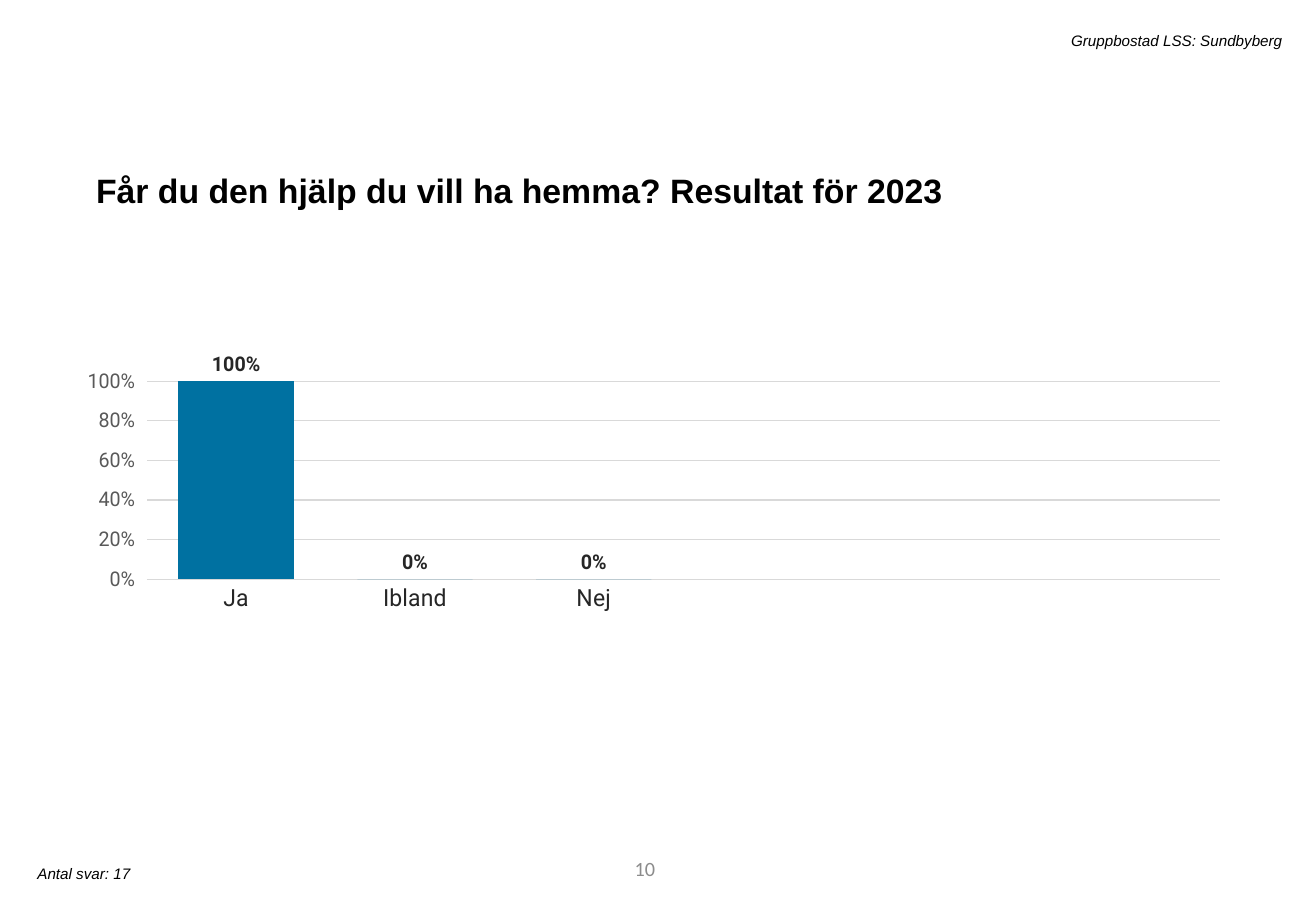
from pptx import Presentation
from pptx.chart.data import CategoryChartData
from pptx.dml.color import RGBColor
from pptx.enum import chart as ch, text as tx
from pptx.util import Inches, Pt

GRID = "D9D9D9"
DARK = "262626"


def color(hex_code):
    return RGBColor.from_string(hex_code)


def style_font(font, size, face="Arial", ink="000000", bold=False, italic=False):
    font.size = Pt(size)
    font.name = face
    font.bold = bold
    font.italic = italic
    font.color.rgb = color(ink)


def place(shape, left, top, width, height):
    shape.left, shape.top = Inches(left), Inches(top)
    shape.width, shape.height = Inches(width), Inches(height)


def write(shape, words, align=tx.PP_ALIGN.LEFT, anchor=tx.MSO_ANCHOR.TOP,
          wrap=True, fit=tx.MSO_AUTO_SIZE.SHAPE_TO_FIT_TEXT, **font_format):
    frame = shape.text_frame
    frame.word_wrap = wrap
    frame.auto_size = fit
    frame.vertical_anchor = anchor
    paragraph = frame.paragraphs[0]
    paragraph.alignment = align
    run = paragraph.add_run()
    run.text = words
    style_font(run.font, **font_format)
    return paragraph


def add_text(slide, words, box, **text_format):
    shape = slide.shapes.add_textbox(*(Inches(n) for n in box))
    return write(shape, words, **text_format)


def set_line(line, hex_code):
    line.color.rgb = color(hex_code)
    line.width = Pt(0.75)


def set_plot_area(chart, **fractions):
    area = chart._chartSpace.chart.plotArea
    layout = area.find(area.tag.replace("plotArea", "layout"))
    if layout is None:
        layout = area.makeelement(area.tag.replace("plotArea", "layout"), {})
        area.insert(0, layout)

    def add(parent, tag, value=None):
        attributes = {} if value is None else {"val": str(value)}
        child = parent.makeelement(area.tag.replace("plotArea", tag), attributes)
        parent.append(child)
        return child

    manual = add(layout, "manualLayout")
    add(manual, "layoutTarget", "inner")
    for side in "xy":
        add(manual, side + "Mode", "edge")
    for side, fraction in fractions.items():
        add(manual, side, fraction)


def add_answer_chart(slide, box):
    answers = CategoryChartData(number_format="0%")
    answers.categories = ["Ja", "Ibland", "Nej", "", "", ""]
    answers.add_series("Series 1", [1, 0, 0, None, None, None])
    chart = slide.shapes.add_chart(
        ch.XL_CHART_TYPE.COLUMN_CLUSTERED, *(Inches(n) for n in box), answers).chart
    chart.has_legend = False
    chart.has_title = False
    style_font(chart.font, 10, "Roboto")
    set_plot_area(chart, x=0.025, y=0.154, w=0.966, h=0.413)

    # Columns and their labels
    plot = chart.plots[0]
    plot.gap_width = 55
    plot.vary_by_categories = False
    columns = plot.series[0]
    columns.invert_if_negative = False
    columns.format.fill.solid()
    columns.format.fill.fore_color.rgb = color("0071A1")
    labels = columns.data_labels
    labels.show_value = True
    labels.position = ch.XL_LABEL_POSITION.OUTSIDE_END
    labels.number_format = "0%"
    labels.number_format_is_linked = False
    style_font(labels.font, 12, "Roboto", DARK, bold=True)

    # Axes
    answer_axis = chart.category_axis
    answer_axis.major_tick_mark = ch.XL_TICK_MARK.NONE
    style_font(answer_axis.tick_labels.font, 14, "Roboto", DARK)
    set_line(answer_axis.format.line, GRID)

    share_axis = chart.value_axis
    share_axis.minimum_scale, share_axis.maximum_scale = 0, 1
    share_axis.major_unit = 0.2
    share_axis.major_tick_mark = ch.XL_TICK_MARK.OUTSIDE
    share_axis.tick_labels.number_format = "0%"
    share_axis.tick_labels.number_format_is_linked = False
    style_font(share_axis.tick_labels.font, 12, "Roboto", "595959")
    share_axis.format.line.fill.background()
    set_line(share_axis.major_gridlines.format.line, GRID)


def main():
    deck = Presentation()
    deck.slide_width, deck.slide_height = Inches(10.83), Inches(7.5)
    slide = deck.slides.add_slide(deck.slide_layouts[5])

    # Question
    question = slide.shapes.title
    place(question, 0.69, 1.28, 9.4, 0.47)
    heading = write(question, "Får du den hjälp du vill ha hemma? Resultat för 2023",
                    size=20, bold=True)
    heading.line_spacing = 1.2
    heading.space_before = Pt(10)

    # Result
    add_answer_chart(slide, (0.72, 2.53, 9.4, 3.95))

    # Header and footer
    add_text(slide, "Gruppbostad LSS: Sundbyberg", (1.79, 0.21, 8.86, 0.25),
             align=tx.PP_ALIGN.RIGHT, size=9, italic=True)
    add_text(slide, "Antal svar: 17", (0.21, 7.07, 2.84, 0.25),
             wrap=False, size=9, italic=True)
    add_text(slide, "10", (3.05, 6.95, 2.44, 0.4), align=tx.PP_ALIGN.RIGHT,
             anchor=tx.MSO_ANCHOR.MIDDLE, fit=tx.MSO_AUTO_SIZE.NONE,
             size=12, face="Calibri", ink="8C8C8C")

    deck.save("out.pptx")


if __name__ == "__main__":
    main()
